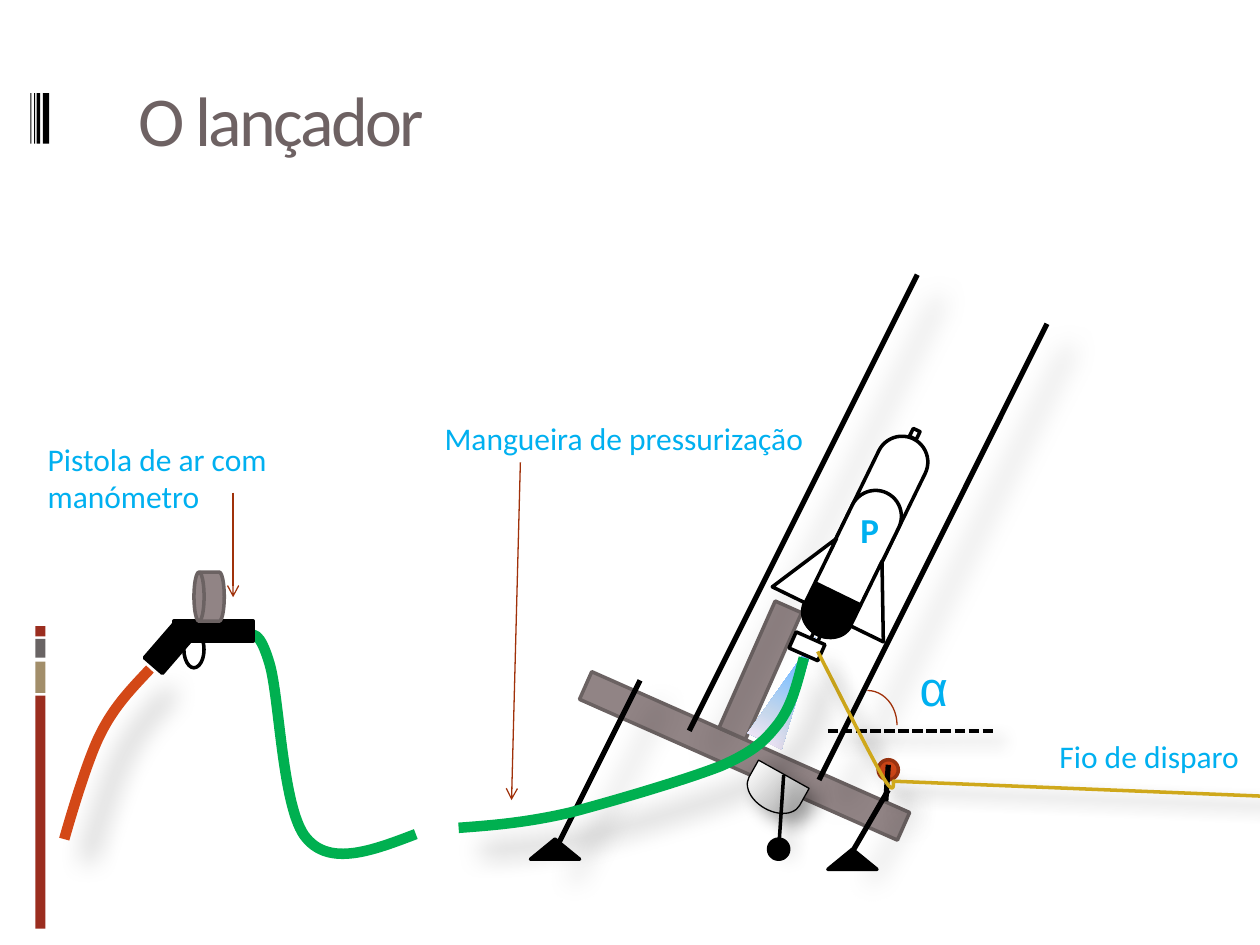
"""Build the slide that shows the parts of a water rocket launcher."""
from dataclasses import dataclass

from lxml.etree import Element, SubElement
from pptx import Presentation
from pptx.dml.color import RGBColor
from pptx.enum.dml import MSO_LINE
from pptx.enum.shapes import MSO_CONNECTOR, MSO_SHAPE
from pptx.enum.text import MSO_ANCHOR, MSO_AUTO_SIZE, PP_ALIGN
from pptx.oxml.ns import qn
from pptx.util import Emu, Pt

PX = 9144
WIDTH, HEIGHT = 1000, 750
TITLE_ONLY = 5
STRAIGHT = MSO_CONNECTOR.STRAIGHT
SHORT_DASH = MSO_LINE.SQUARE_DOT
TOP, LEFT = MSO_ANCHOR.TOP, PP_ALIGN.LEFT
GROW, FIXED = MSO_AUTO_SIZE.SHAPE_TO_FIT_TEXT, MSO_AUTO_SIZE.NONE
RECT, ROUND, OVAL = MSO_SHAPE.RECTANGLE, MSO_SHAPE.ROUNDED_RECTANGLE, MSO_SHAPE.OVAL
FOOT, HALF_ROUND = MSO_SHAPE.FLOWCHART_EXTRACT, MSO_SHAPE.FLOWCHART_DELAY
DRUM, ARC = MSO_SHAPE.FLOWCHART_DIRECT_ACCESS_STORAGE, MSO_SHAPE.ARC
FIN, CONE = MSO_SHAPE.RIGHT_TRIANGLE, MSO_SHAPE.ISOSCELES_TRIANGLE


@dataclass(frozen=True)
class Theme:
    black: str = "000000"
    white: str = "FFFFFF"
    red: str = "9B2D1F"
    tan: str = "A28E6A"
    gray: str = "696464"
    title: str = "6E6263"
    wood: str = "918485"
    wood_edge: str = "6B6262"
    label: str = "00B0F0"
    pointer: str = "A0310A"
    orange: str = "D34817"
    orange_edge: str = "9C3511"
    thread: str = "CFA81B"
    hose: str = "00B050"
    font: str = "Calibri"
    symbol_font: str = "Arial"
    title_size: int = 40
    symbol_size: int = 28
    pressure_size: int = 20
    label_size: int = 18


THEME = Theme()
FAR_SHADOW = {"alpha": 26, "blur": 15, "distance": 18}
NEAR_SHADOW = {"alpha": 35, "blur": 10.2, "distance": 8}
SPRAY = {"stops": [(0, "5E9EFF"), (40, "85C2FF"), (70, "C4D6EB"), (100, "FFEBFA")]}
METAL = {"stops": [(20, "F5F5F5"), (100, "979797")], "circle": True}
WOOD = {"fill": THEME.wood, "line": THEME.wood_edge}
INK = {"fill": THEME.black, "line": THEME.black}
PAPER = {"fill": THEME.white, "line": THEME.black}
ROD = {"color": THEME.black, "width": 3, "shadow": FAR_SHADOW}
FINE_ROD = {"color": THEME.black, "width": 2, "shadow": NEAR_SHADOW}
POINTER = {"color": THEME.pointer, "width": 0.75, "arrow": True}
TILT = 26
PLANK_TILT = 23.9

TITLE = ("O lançador", (100, 56, 850, 100))
SIDE_BARS = [(552, 185, THEME.red), (525, 25, THEME.tan),
             (507, 15, THEME.gray), (497, 8, THEME.red)]
TITLE_BARS = [(34, 5), (29, 3), (27, 1), (24, 1)]
PLANKS = [(453, 588, 276, 24), (592, 477, 23, 110)]
LEGS = [((508, 540), (437, 682)), ((705, 627), (673, 682))]
FEET = [(421, 666, 39, 16), (657, 674, 39, 16)]
RAILS = [((728, 218), (547, 580)), ((831, 257), (650, 619))]
ROCKET = [
    (ROUND, (677, 342, 41, 125), {**PAPER, "corner": 0.5}),
    (ROUND, (656, 385, 41, 125), {**PAPER, "corner": 0.5}),
    (RECT, (644, 503, 6, 7), PAPER),
    (HALF_ROUND, (639, 467, 36, 41), {**INK, "turn": TILT + 90}),
    (FIN, (686, 449, 29, 57), PAPER),
    (FIN, (624, 418, 29, 57), {**PAPER, "flip": True}),
    (RECT, (723, 341, 6, 7), PAPER),
    (CONE, (612, 501, 30, 92), {"fill": SPRAY}),
]
NOZZLE = (628, 506, 25, 14)
HORIZON = ((657, 580), (791, 580))
ANGLE_ARC = (665, 548, 47, 55)
TRIGGER_BALL = (697, 603, 16, 16)
TRIGGER_ROD = ((705, 607), (703, 636))
THREAD = [(649, 517), (670, 558), (691, 600), (701, 617),
          (711, 634), (709, 620), (709, 620), (1252, 642)]
LAUNCH_HOSE = [(638, 522), (633, 541), (629, 559), (618, 574), (607, 588), (599, 596),
               (572, 608), (544, 619), (486, 636), (452, 645), (417, 653), (391, 655),
               (364, 657)]
GUN_HOSE = [(330, 662), (296, 675), (262, 688), (243, 665), (224, 643), (222, 554),
            (214, 527), (206, 500), (201, 503), (195, 505)]
INLET_HOSE = [(119, 531), (105, 546), (91, 560), (80, 582), (68, 605), (51, 666), (51, 666)]
GUN = [
    (RECT, (138, 493, 63, 16), INK),
    (RECT, (115, 504, 39, 19), {**INK, "turn": 310.9}),
    (OVAL, (146, 501, 16, 29), {"line": THEME.black}),
]
GAUGE = (154, 454, 24, 39)
SYMBOLS = [
    ("α", (720, 517, 102, 57), {"size": THEME.symbol_size, "font": THEME.symbol_font}),
    ("P", (673, 399, 39, 44), {"size": THEME.pressure_size, "bold": True}),
]
LABELS = [
    ("Fio de disparo", (831, 580, 260, 40)),
    ("Mangueira de pressurização", (343, 328, 425, 40)),
    ("Pistola de ar com manómetro", (28, 344, 244, 71)),
]
POINTERS = [((413, 367), (406, 635)), ((185, 391), (185, 474))]
BOWL = (599, 605, 31, 46)
PENDULUM = ((622, 615), (618, 674))
BOB = (610, 666, 16, 16)


def emu(values):
    return [Emu(value * PX) for value in values]


def add_effects(shape, shadow=None):
    effects = SubElement(shape._element.spPr, qn("a:effectLst"))
    if shadow:
        outer = SubElement(effects, qn("a:outerShdw"), blurRad=str(Pt(shadow["blur"])),
                           dist=str(Pt(shadow["distance"])), dir="2700000",
                           algn="tl", rotWithShape="0")
        color = SubElement(outer, qn("a:srgbClr"), val=THEME.black)
        SubElement(color, qn("a:alpha"), val=str(shadow["alpha"] * 1000))


def fill_gradient(shape, stops, circle=False):
    shape.fill.background()
    gradient = Element(qn("a:gradFill"), rotWithShape="1")
    stop_list = SubElement(gradient, qn("a:gsLst"))
    for position, color in stops:
        stop = SubElement(stop_list, qn("a:gs"), pos=str(position * 1000))
        SubElement(stop, qn("a:srgbClr"), val=color)
    if circle:
        radial = SubElement(gradient, qn("a:path"), path="circle")
        SubElement(radial, qn("a:fillToRect"), l="-15000", t="-15000", r="115000", b="115000")
    else:
        SubElement(gradient, qn("a:lin"), ang="5400000", scaled="0")
    properties = shape._element.spPr
    properties.replace(properties.find(qn("a:noFill")), gradient)


def style_line(line, color, width):
    line.color.rgb = RGBColor.from_string(color)
    line.width = Pt(width)


def add_part(shapes, kind, place, fill=None, line=None, width=2, turn=0, flip=False,
             corner=None, shadow=None):
    part = shapes.add_shape(kind, *emu(place))
    part.rotation = turn
    if flip:
        part._element.spPr.find(qn("a:xfrm")).set("flipH", "1")
    if corner is not None:
        part.adjustments[0] = corner
    if isinstance(fill, dict):
        fill_gradient(part, **fill)
    elif fill:
        part.fill.solid()
        part.fill.fore_color.rgb = RGBColor.from_string(fill)
    else:
        part.fill.background()
    if line:
        style_line(part.line, line, width)
    else:
        part.line.fill.background()
    add_effects(part, shadow)


def add_line(shapes, ends, color, width, shadow=None, dash=None, arrow=False):
    start, end = ends
    rod = shapes.add_connector(STRAIGHT, *emu(start + end))
    style_line(rod.line, color, width)
    if dash:
        rod.line.dash_style = dash
    if arrow:
        SubElement(rod.line._get_or_add_ln(), qn("a:tailEnd"), type="arrow")
    add_effects(rod, shadow)


def add_curve(shapes, points, color, width, shadow=None):
    builder = shapes.build_freeform(*points[0], scale=PX)
    builder.add_line_segments(points[1:], close=False)
    curve = builder.convert_to_shape()
    steps = list(curve._element.spPr.iter(qn("a:lnTo")))
    for index in range(0, len(steps) - 2, 3):
        bezier = Element(qn("a:cubicBezTo"))
        steps[index].addprevious(bezier)
        for step in steps[index:index + 3]:
            bezier.append(step[0])
            step.getparent().remove(step)
    curve.fill.background()
    style_line(curve.line, color, width)
    add_effects(curve, shadow)


def write(frame, text, size=THEME.label_size, color=THEME.label, font=THEME.font,
          bold=False, spacing=None, fit=GROW):
    frame.word_wrap = True
    frame.auto_size = fit
    frame.vertical_anchor = TOP
    para = frame.paragraphs[0]
    para.alignment = LEFT
    span = para.add_run()
    span.text = text
    span.font.size, span.font.name, span.font.bold = Pt(size), font, bold
    span.font.color.rgb = RGBColor.from_string(color)
    if spacing is not None:
        span.font._element.set("spc", str(spacing))


def main():
    deck = Presentation()
    deck.slide_width, deck.slide_height = emu((WIDTH, HEIGHT))
    page = deck.slides.add_slide(deck.slide_layouts[TITLE_ONLY])
    shapes = page.shapes
    text, place = TITLE
    title = shapes.title
    title.left, title.top, title.width, title.height = emu(place)
    write(title.text_frame, text, size=THEME.title_size, color=THEME.title,
          spacing=-150, fit=FIXED)

    for top, height, color in SIDE_BARS:
        add_part(shapes, RECT, (28, top, 8, height), fill=color)
    for left, width in TITLE_BARS:
        add_part(shapes, RECT, (left, 74, width, 40), fill=THEME.black)
    for plank in PLANKS:
        add_part(shapes, RECT, plank, turn=PLANK_TILT, **WOOD)
    for rod in LEGS + RAILS:
        add_line(shapes, rod, **ROD)
    for foot in FEET:
        add_part(shapes, FOOT, foot, **INK)

    rocket = shapes.add_group_shape()
    for kind, place, style in ROCKET:
        add_part(rocket.shapes, kind, place, **{"turn": TILT, **style})
    add_part(shapes, RECT, NOZZLE, turn=PLANK_TILT, **PAPER)
    add_line(shapes, HORIZON, dash=SHORT_DASH, **FINE_ROD)
    add_part(shapes, ARC, ANGLE_ARC, line=THEME.pointer, width=0.75)

    add_part(shapes, OVAL, TRIGGER_BALL, fill=THEME.orange, line=THEME.orange_edge)
    add_line(shapes, TRIGGER_ROD, **ROD)
    add_curve(shapes, THREAD, THEME.thread, 2, NEAR_SHADOW)
    add_curve(shapes, LAUNCH_HOSE, THEME.hose, 6, FAR_SHADOW)
    add_curve(shapes, GUN_HOSE, THEME.hose, 6)
    for kind, place, style in GUN:
        add_part(shapes, kind, place, **style)
    add_curve(shapes, INLET_HOSE, THEME.orange, 6, FAR_SHADOW)
    add_part(shapes, DRUM, GAUGE, flip=True, **WOOD)

    for text, place, style in SYMBOLS + [(*label, {}) for label in LABELS]:
        write(shapes.add_textbox(*emu(place)).text_frame, text, **style)
    for pointer in POINTERS:
        add_line(shapes, pointer, **POINTER)
    add_part(shapes, HALF_ROUND, BOWL, fill=METAL, line=THEME.black, width=0.75,
             turn=119.2, shadow=NEAR_SHADOW)
    add_line(shapes, PENDULUM, **FINE_ROD)
    add_part(shapes, OVAL, BOB, **INK)
    deck.save("out.pptx")


if __name__ == "__main__":
    main()
